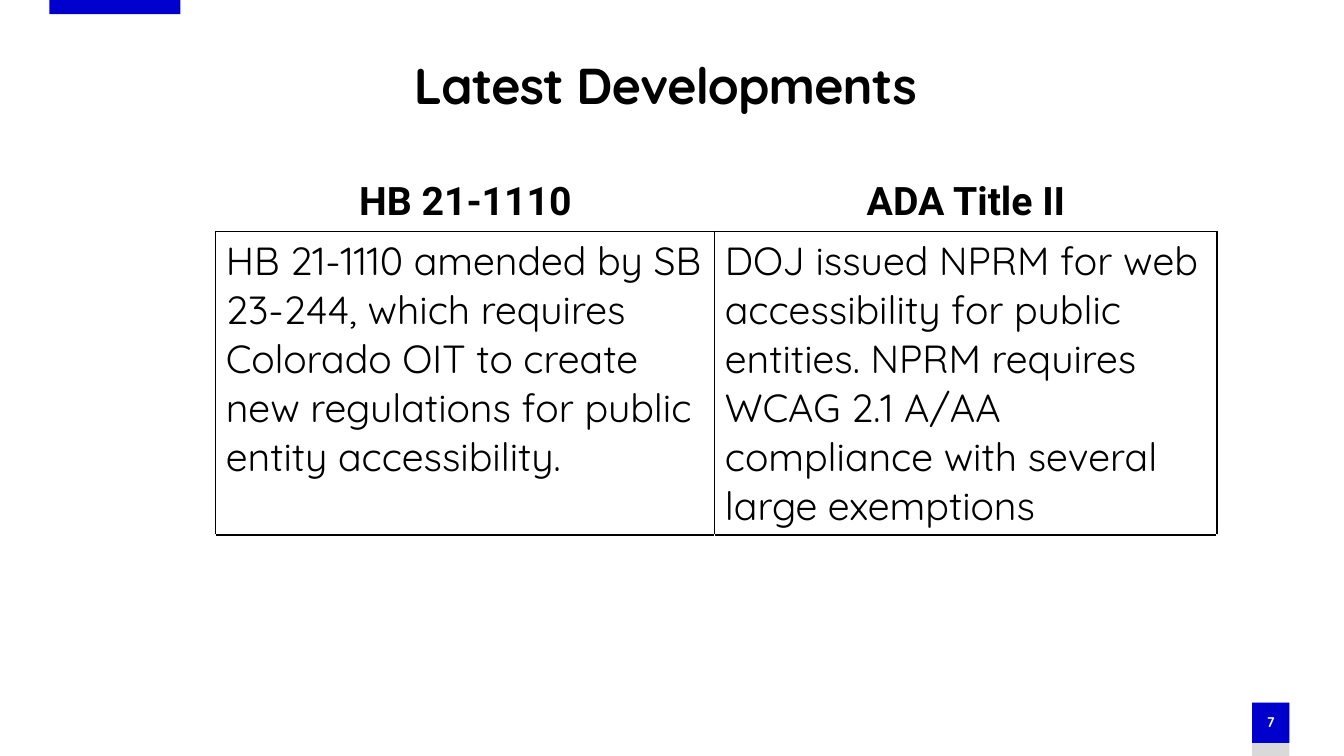
import pptx
import pptx.dml.color
import pptx.enum.shapes
import pptx.enum.text
import pptx.oxml
import pptx.oxml.ns
import pptx.util
from dataclasses import dataclass

Inches = pptx.util.Inches
Pt = pptx.util.Pt
CENTER = pptx.enum.text.PP_ALIGN.CENTER
LEFT = pptx.enum.text.PP_ALIGN.LEFT
MIDDLE = pptx.enum.text.MSO_ANCHOR.MIDDLE


@dataclass(frozen=True)
class Theme:
    blue: str = "0000CD"
    grey: str = "D9D9D9"
    black: str = "000000"
    white: str = "FFFFFF"
    main_font: str = "Quicksand"
    header_font: str = "Roboto"
    title_size: int = 36
    table_size: int = 28
    number_size: int = 10
    border_width: int = 1


THEME = Theme()

DEVELOPMENTS = [
    (
        "HB 21-1110",
        "HB 21-1110 amended by SB 23-244, which requires Colorado OIT to create "
        "new regulations for public entity accessibility.",
    ),
    (
        "ADA Title II",
        "DOJ issued NPRM for web accessibility for public entities. NPRM requires "
        "WCAG 2.1 A/AA compliance with several large exemptions",
    ),
]
COLUMN_WIDTHS = [4.95, 4.98]
ROW_HEIGHTS = [0.56, 3.01, 0.46]
ROW_BORDERS = ["B", "LRTB", "T"]


def rgb(color):
    return pptx.dml.color.RGBColor.from_string(color)


def write(para, text, size, color, font=THEME.main_font, bold=True, align=CENTER):
    para.alignment = align
    span = para.add_run()
    span.text = text
    span.font.name = font
    span.font.size = Pt(size)
    span.font.bold = bold
    span.font.color.rgb = rgb(color)
    return span


def add_block(page, left, top, width, height, color):
    block = page.shapes.add_shape(
        pptx.enum.shapes.MSO_SHAPE.RECTANGLE,
        Inches(left), Inches(top), Inches(width), Inches(height),
    )
    block.shadow.inherit = False
    block.fill.solid()
    block.fill.fore_color.rgb = rgb(color)
    block.line.fill.background()
    return block


def add_page_number(page, number):
    add_block(page, 12.42, 6.97, 0.37, 0.53, THEME.grey)
    badge = add_block(page, 12.42, 6.97, 0.37, 0.4, THEME.blue)
    frame = badge.text_frame
    frame.margin_left = frame.margin_right = 0
    frame.vertical_anchor = MIDDLE
    para = frame.paragraphs[0]
    para.line_spacing = 0.9
    para.space_before = Pt(10)
    write(para, number, THEME.number_size, THEME.white)


def add_title(page, text):
    box = page.shapes.add_textbox(Inches(0.49), Inches(0.55), Inches(12.22), Inches(0.65))
    frame = box.text_frame
    frame.word_wrap = True
    frame.vertical_anchor = MIDDLE
    para = frame.paragraphs[0]
    para.line_spacing = 0.9
    span = write(para, text, THEME.title_size, THEME.black)
    span.font._element.set("spc", "-60")


def style_cell(cell, sides):
    properties = cell._tc.get_or_add_tcPr()
    for side in sides:
        properties.append(pptx.oxml.parse_xml(
            f'<a:ln{side} {pptx.oxml.ns.nsdecls("a")} w="{Pt(THEME.border_width)}">'
            f'<a:solidFill><a:srgbClr val="{THEME.black}"/></a:solidFill></a:ln{side}>'
        ))
    cell.fill.background()


def add_developments_table(page):
    table = page.shapes.add_table(
        len(ROW_HEIGHTS), len(COLUMN_WIDTHS), Inches(2.14), Inches(1.73),
        Inches(sum(COLUMN_WIDTHS)), Inches(sum(ROW_HEIGHTS)),
    ).table
    table.first_row = False
    table.horz_banding = False
    for row, height, sides in zip(table.rows, ROW_HEIGHTS, ROW_BORDERS):
        row.height = Inches(height)
        for cell in row.cells:
            style_cell(cell, sides)
    for index, (heading, detail) in enumerate(DEVELOPMENTS):
        table.columns[index].width = Inches(COLUMN_WIDTHS[index])
        write(table.cell(0, index).text_frame.paragraphs[0], heading,
              THEME.table_size, THEME.black, font=THEME.header_font)
        write(table.cell(1, index).text_frame.paragraphs[0], detail,
              THEME.table_size, THEME.black, bold=False, align=LEFT)


def main():
    deck = pptx.Presentation()
    deck.slide_width = Inches(13.33)
    deck.slide_height = Inches(7.5)
    page = deck.slides.add_slide(deck.slide_layouts[6])
    add_page_number(page, "7")
    add_block(page, 0.49, 0, 1.3, 0.14, THEME.blue)
    add_title(page, "Latest Developments")
    add_developments_table(page)
    deck.save("out.pptx")


if __name__ == "__main__":
    main()
